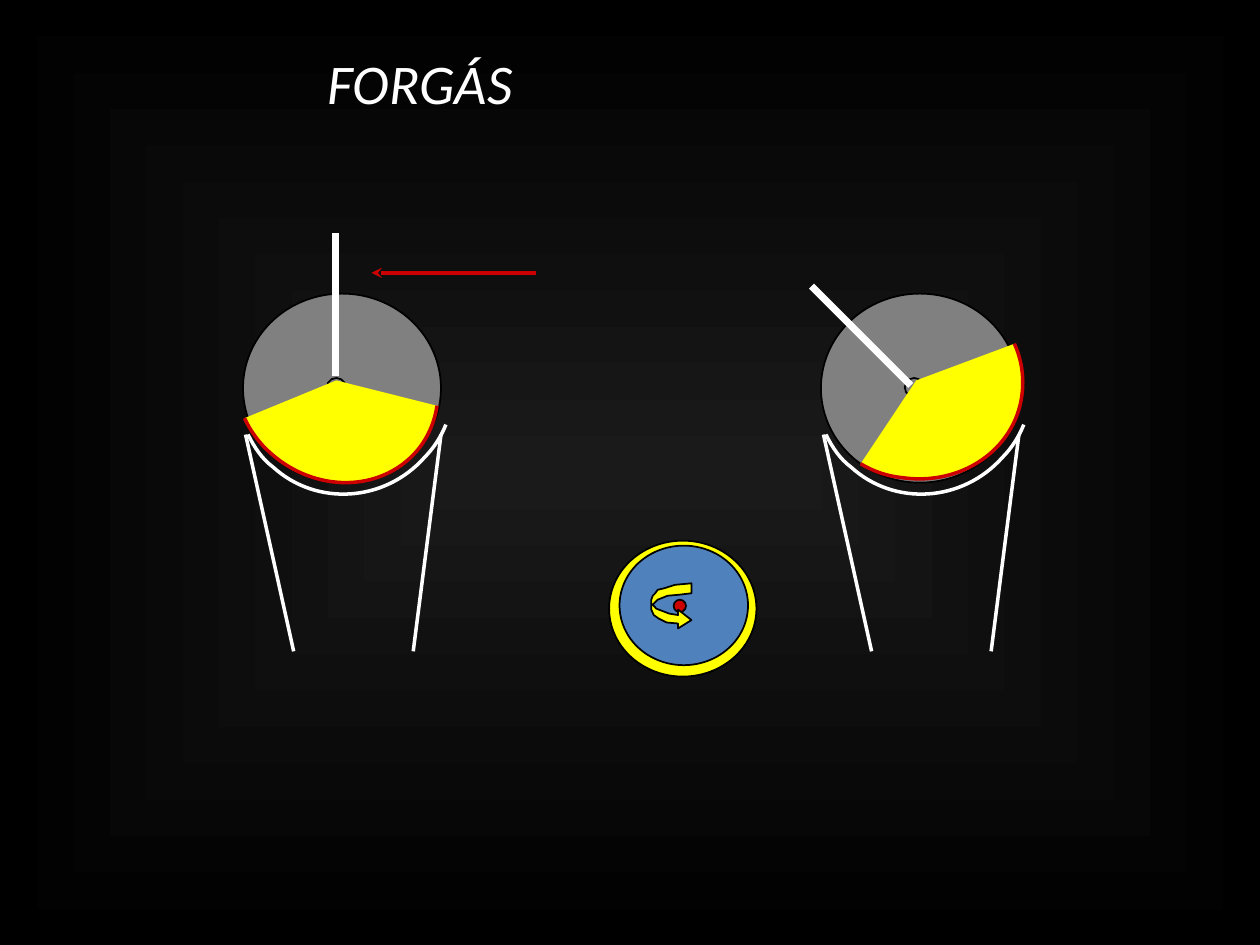
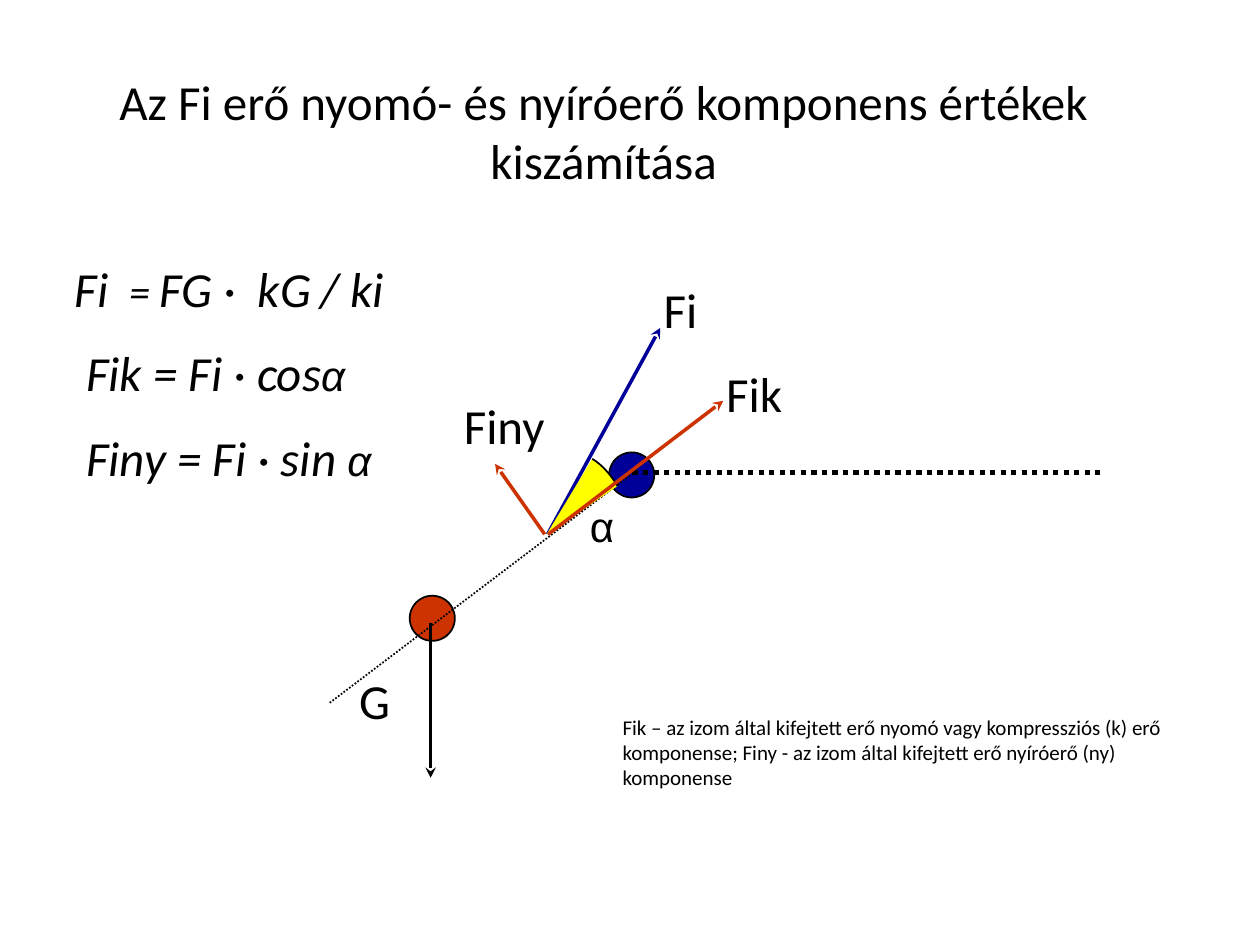
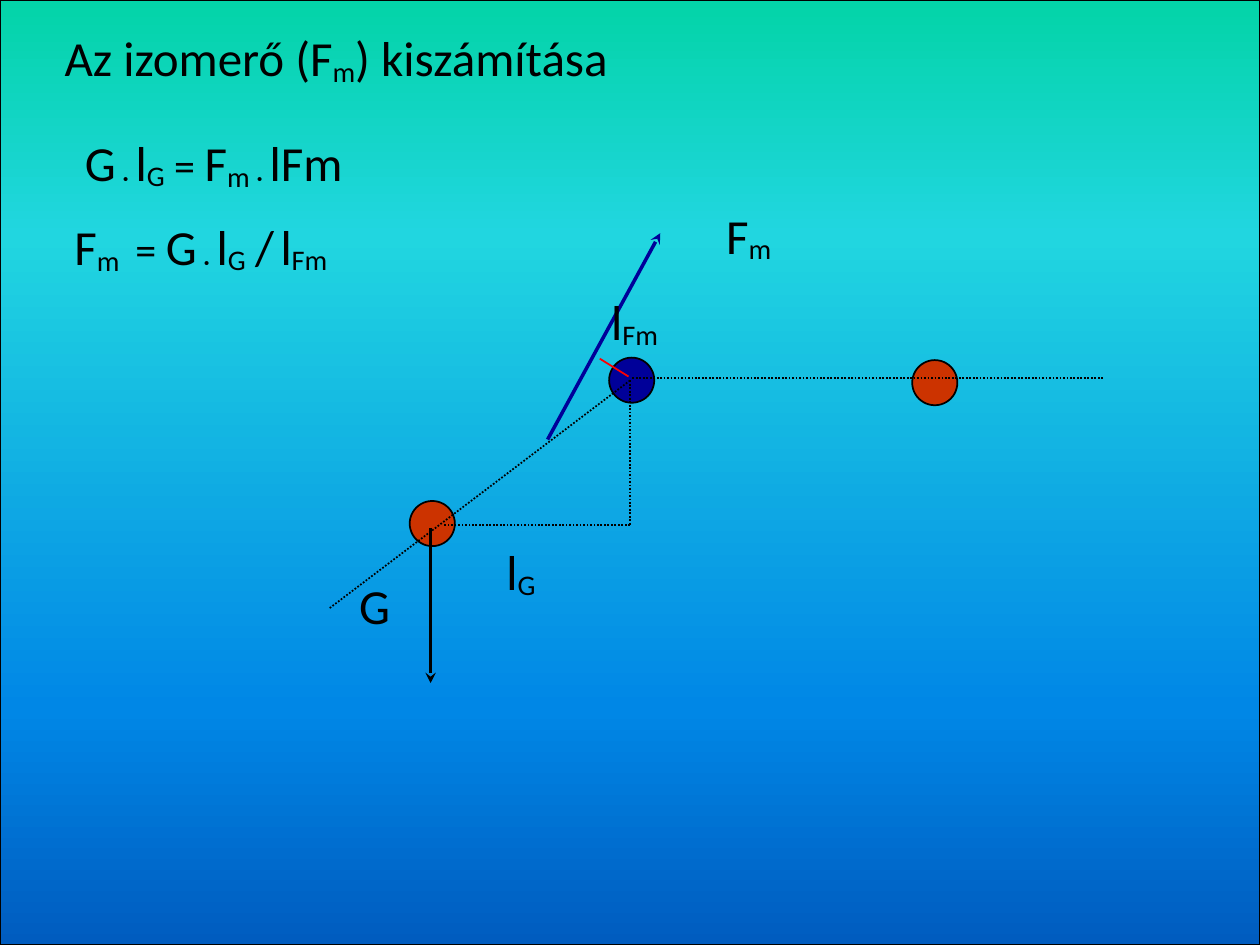
from copy import deepcopy
from dataclasses import dataclass

from lxml import etree
from pptx import Presentation
from pptx.dml.color import RGBColor
from pptx.enum.dml import MSO_LINE
from pptx.enum.shapes import MSO_CONNECTOR, MSO_SHAPE
from pptx.enum.text import MSO_ANCHOR, MSO_AUTO_SIZE, PP_ALIGN
from pptx.oxml import parse_xml
from pptx.oxml.ns import nsdecls, qn
from pptx.util import Cm, Pt

ELLIPSE, RECT = MSO_SHAPE.OVAL, MSO_SHAPE.RECTANGLE
STRAIGHT = MSO_CONNECTOR.STRAIGHT
DOTTED = MSO_LINE.ROUND_DOT
LEFT, CENTER = PP_ALIGN.LEFT, PP_ALIGN.CENTER
TOP = MSO_ANCHOR.TOP
NO_AUTOFIT = MSO_AUTO_SIZE.NONE

SLIDE_W, SLIDE_H = 25.4, 19.05
TITLE_ONLY = 5


@dataclass(frozen=True)
class Theme:
    black: str = "000000"
    white: str = "FFFFFF"
    grey: str = "808080"
    yellow: str = "FFFF00"
    blue: str = "4F81BD"
    navy: str = "000099"
    crimson: str = "CC0000"
    rust: str = "CC3300"
    red: str = "FF0000"
    dark_stops: tuple = ((0, "1A1A1A"), (100, "000000"))
    sea_stops: tuple = ((0, "03D4A8"), (25, "21D6E0"), (75, "0087E6"), (100, "005CBF"))
    font: str = "Calibri"
    greek_font: str = "Arial"
    heading: int = 32
    body: int = 28
    small: int = 24
    note: int = 12
    thin: int = 1
    medium: int = 2
    thick: int = 3
    lever: int = 4


T = Theme()


@dataclass(frozen=True)
class Run:
    text: str
    size: int = T.body
    font: str = T.font
    drop: int = 0


def sub(text, drop=12):
    """Subscript run, lowered by drop percent."""
    return Run(text, drop=drop)


def small(text):
    return Run(text, T.small)


def alpha():
    return Run("α", T.small, T.greek_font)


def rgb(color):
    return RGBColor.from_string(color)


# Text

def write(tf, runs, color=T.black, align=LEFT, italic=False):
    tf.word_wrap = True
    tf.auto_size = NO_AUTOFIT
    tf.vertical_anchor = TOP
    p = tf.paragraphs[0]
    p.alignment = align
    for run in runs:
        run = Run(run) if isinstance(run, str) else run
        r = p.add_run()
        r.text = run.text
        r.font.name = run.font
        r.font.size = Pt(run.size)
        r.font.italic = italic
        r.font.color.rgb = rgb(color)
        if run.drop:
            r.font._element.set("baseline", str(-1000 * run.drop))


def set_title(s, box, *runs, **style):
    sp = s.shapes.title
    sp.left, sp.top, sp.width, sp.height = map(Cm, box)
    write(sp.text_frame, runs, **style)


def add_label(s, x, y, w, *runs, h=1.45, **style):
    sp = s.shapes.add_textbox(Cm(x), Cm(y), Cm(w), Cm(h))
    write(sp.text_frame, runs, **style)


# Shapes and lines

def paint(sp, fill=None, line=None, width=T.thin):
    sp.shadow.inherit = False
    if fill:
        sp.fill.solid()
        sp.fill.fore_color.rgb = rgb(fill)
    else:
        sp.fill.background()
    if line:
        sp.line.color.rgb = rgb(line)
        sp.line.width = Pt(width)
    else:
        sp.line.fill.background()


def add_ellipse(s, x, y, w, h, fill):
    sp = s.shapes.add_shape(ELLIPSE, Cm(x), Cm(y), Cm(w), Cm(h))
    paint(sp, fill, T.black)


def add_ball(s, x, y, fill):
    add_ellipse(s, x, y, 0.91, 0.91, fill)


def add_line(s, start, end, color=T.black, width=T.thin, dash=None, arrow=False):
    c = s.shapes.add_connector(STRAIGHT, *map(Cm, (*start, *end)))
    c.line.color.rgb = rgb(color)
    c.line.width = Pt(width)
    if dash:
        c.line.dash_style = dash
    if arrow:
        etree.SubElement(c.line._get_or_add_ln(), qn("a:tailEnd"), type="stealth")
    etree.SubElement(c._element.spPr, qn("a:effectLst"))


def add_outline(s, points, **style):
    pts = [(Cm(x), Cm(y)) for x, y in points]
    builder = s.shapes.build_freeform(*pts[0])
    builder.add_line_segments(pts[1:], close=True)
    sp = builder.convert_to_shape()
    paint(sp, **style)
    return sp


def add_sector(s, controls, apex, **style):
    """Sector with a Bézier arc; only the arc is stroked, only the sector filled."""
    sp = add_outline(s, controls + [apex], **style)
    sector = sp._element.spPr.find(".//" + qn("a:path"))
    steps = sector.findall(qn("a:lnTo"))[:-1]
    for i in range(0, len(steps), 3):
        bezier = etree.Element(qn("a:cubicBezTo"))
        steps[i].addprevious(bezier)
        for step in steps[i:i + 3]:
            bezier.append(step[0])
            sector.remove(step)
    arc = deepcopy(sector)
    for tag in ("a:lnTo", "a:close"):
        arc.remove(arc.find(qn(tag)))
    arc.set("fill", "none")
    sector.set("stroke", "0")
    sector.addprevious(arc)


def add_backdrop(s, stops, direction, inset=0):
    """Full-slide gradient behind everything; direction is the gradient's XML."""
    sp = s.shapes.add_shape(RECT, Cm(inset), 0, Cm(SLIDE_W - 2 * inset), Cm(SLIDE_H))
    paint(sp, T.black, T.black)
    gs = "".join(f'<a:gs pos="{pos * 1000}"><a:srgbClr val="{color}"/></a:gs>'
                 for pos, color in stops)
    grad = parse_xml(f'<a:gradFill {nsdecls("a")} rotWithShape="1">'
                     f'<a:gsLst>{gs}</a:gsLst>{direction}</a:gradFill>')
    sp_pr = sp._element.spPr
    sp_pr.replace(sp_pr.find(qn("a:solidFill")), grad)
    s.shapes._spTree.insert(2, sp._element)


# Slide 1

CUP = [(8.99, 8.56), (8.89, 8.81), (8.74, 9.04), (8.56, 9.22), (7.75, 10.13),
       (6.38, 10.21), (5.51, 9.42), (5.28, 9.25), (5.13, 9.02), (5, 8.76)]
UPRIGHT_ARC = [(8.81, 8.18), (8.76, 8.53), (8.61, 8.86), (8.38, 9.12), (7.65, 9.93),
               (6.35, 9.93), (5.46, 9.14), (5.23, 8.94), (5.05, 8.69), (4.93, 8.43)]
TURNED_ARC = [(20.45, 6.93), (20.6, 7.26), (20.65, 7.62), (20.6, 7.98), (20.45, 9.07),
              (19.38, 9.8), (18.19, 9.63), (17.88, 9.6), (17.6, 9.5), (17.35, 9.35)]
TURN_ARROW = [(13.94, 11.76), (13.61, 11.79), (13.39, 11.86), (13.26, 11.89),
              (13.21, 11.96), (13.16, 12.01), (13.13, 12.09), (13.13, 12.29),
              (13.18, 12.4), (13.28, 12.47), (13.44, 12.55), (13.67, 12.57),
              (13.67, 12.67), (13.94, 12.5), (13.67, 12.29), (13.67, 12.4),
              (13.49, 12.37), (13.36, 12.32), (13.23, 12.27), (13.16, 12.19),
              (13.26, 12.09), (13.46, 12.01), (13.69, 11.99), (13.94, 11.96)]


def add_joint(s, dx, lever, arc, apex):
    """Disc with lever and contact sector, resting in a cup on two legs."""
    add_ellipse(s, 4.9 + dx, 5.92, 3.99, 3.81, T.grey)
    add_ellipse(s, 6.59 + dx, 7.62, 0.38, 0.38, T.grey)
    add_line(s, *lever, T.white, T.lever)
    add_sector(s, arc, apex, fill=T.yellow, line=T.crimson, width=T.medium)
    cup = [(x + dx, y) for x, y in CUP]
    add_sector(s, cup, (6.99 + dx, 7.8), line=T.white, width=T.medium)
    for top, foot in ((4.95, 5.92), (8.89, 8.33)):
        add_line(s, (top + dx, 8.76), (foot + dx, 13.13), T.white, T.medium)


def build_rotation(s):
    add_backdrop(s, T.dark_stops, '<a:path path="shape"><a:fillToRect l="50000" '
                                  't="50000" r="50000" b="50000"/></a:path>', 0.02)
    set_title(s, (2.12, 0.86, 12.7, 1.63), Run("FORGÁS", T.heading),
              color=T.white, align=CENTER, italic=True)
    add_joint(s, 0, ((6.77, 7.57), (6.77, 4.7)), UPRIGHT_ARC, (6.78, 7.67))
    add_joint(s, 11.65, ((18.36, 7.77), (16.36, 5.77)), TURNED_ARC, (18.47, 7.67))
    add_line(s, (10.8, 5.5), (7.49, 5.5), T.crimson, T.medium, arrow=True)
    add_ellipse(s, 12.28, 10.9, 2.97, 2.74, T.yellow)
    add_ellipse(s, 12.49, 11, 2.59, 2.41, T.blue)
    add_ellipse(s, 13.58, 12.09, 0.25, 0.25, T.crimson)
    add_outline(s, TURN_ARROW, fill=T.yellow, line=T.black)


# Slides 2 and 3

def add_limb(s, dy, upper_width):
    """Two-part limb with its joint, weight and muscle force."""
    add_ball(s, 8.26, 10.1 + dy, T.rust)
    add_ball(s, 12.28, 7.21 + dy, T.navy)
    add_line(s, (12.7, 7.67 + dy), (6.63, 12.27 + dy), dash=DOTTED)
    add_line(s, (12.75, 7.62 + dy), (22.23, 7.62 + dy), width=upper_width, dash=DOTTED)
    add_line(s, (8.68, 10.64 + dy), (8.68, 13.77 + dy), width=T.medium, arrow=True)
    add_label(s, 6.99, 11.48 + dy, 2, "G")
    add_line(s, (11.04, 8.86 + dy), (13.31, 4.7 + dy), T.navy, T.medium, arrow=True)


def build_components(s):
    set_title(s, (1.05, 1.32, 22.23, 2.62),
              "Az Fi erő nyomó- és nyíróerő komponens értékek kiszámítása", align=CENTER)
    add_limb(s, 1.91, T.thick)
    add_sector(s, [(11.94, 9.25), (12.14, 9.37), (12.32, 9.58), (12.45, 9.8)],
               (11.02, 10.77), fill=T.yellow, line=T.black)
    add_line(s, (10.98, 10.77), (9.98, 9.35), T.rust, T.medium, arrow=True)
    add_line(s, (11.05, 10.77), (14.58, 8.08), T.rust, T.medium, arrow=True)
    add_label(s, 13.13, 5.51, 1.7, "Fi")
    add_label(s, 14.39, 7.21, 2.34, "Fik")
    add_label(s, 9.1, 7.85, 3, "Finy")
    add_label(s, 11.64, 9.96, 1.27, alpha())
    add_label(s, 1.26, 5.09, 8.26, "Fi ", small(" = "), "FG ·  kG", small(" "), "/ ki",
              italic=True)
    add_label(s, 1.49, 6.78, 6.55, "Fik = Fi · cos", alpha(), italic=True)
    add_label(s, 1.49, 8.49, 7.42, "Finy = Fi · sin ", alpha(), italic=True)
    add_label(s, 12.3, 14.28, 11.51,
              Run("Fik – az izom által kifejtett erő nyomó vagy kompressziós (k) erő "
                  "komponense; Finy - az izom által kifejtett erő nyíróerő (ny) "
                  "komponense", T.note), h=1.8)


def build_muscle_force(s):
    add_backdrop(s, T.sea_stops, '<a:lin ang="5400000" scaled="0"/>')
    set_title(s, (1.05, 0.43, 20.12, 1.45), "Az izomerő (F", sub("m"), ") kiszámítása")
    add_ball(s, 18.39, 7.26, T.rust)
    add_limb(s, 0, T.thin)
    corner = (12.7, 10.59)
    add_line(s, corner, (8.94, 10.59), dash=DOTTED)
    add_line(s, (12.7, 7.67), corner, dash=DOTTED)
    add_line(s, (12.67, 7.59), (12.09, 7.23), T.red)
    add_label(s, 9.96, 10.8, 2.54, "l", sub("G", 10))
    add_label(s, 14.39, 4.01, 1.7, "F", sub("m"))
    add_label(s, 12.07, 5.75, 2.97, "l", sub("Fm", 10))
    add_label(s, 1.46, 2.54, 7.42, "G", sub(" · "), "l", sub("G", 10), small(" = "),
              "F", sub("m · "), "lFm")
    add_label(s, 1.25, 4.24, 8.26, "F", sub("m "), small(" = "), "G", sub(" · "), "l",
              sub("G", 10), small(" "), "/", sub(" ", 10), "l", sub("Fm", 10))


def main():
    prs = Presentation()
    prs.slide_width, prs.slide_height = Cm(SLIDE_W), Cm(SLIDE_H)
    for build in (build_rotation, build_components, build_muscle_force):
        build(prs.slides.add_slide(prs.slide_layouts[TITLE_ONLY]))
    prs.save("out.pptx")


if __name__ == "__main__":
    main()
